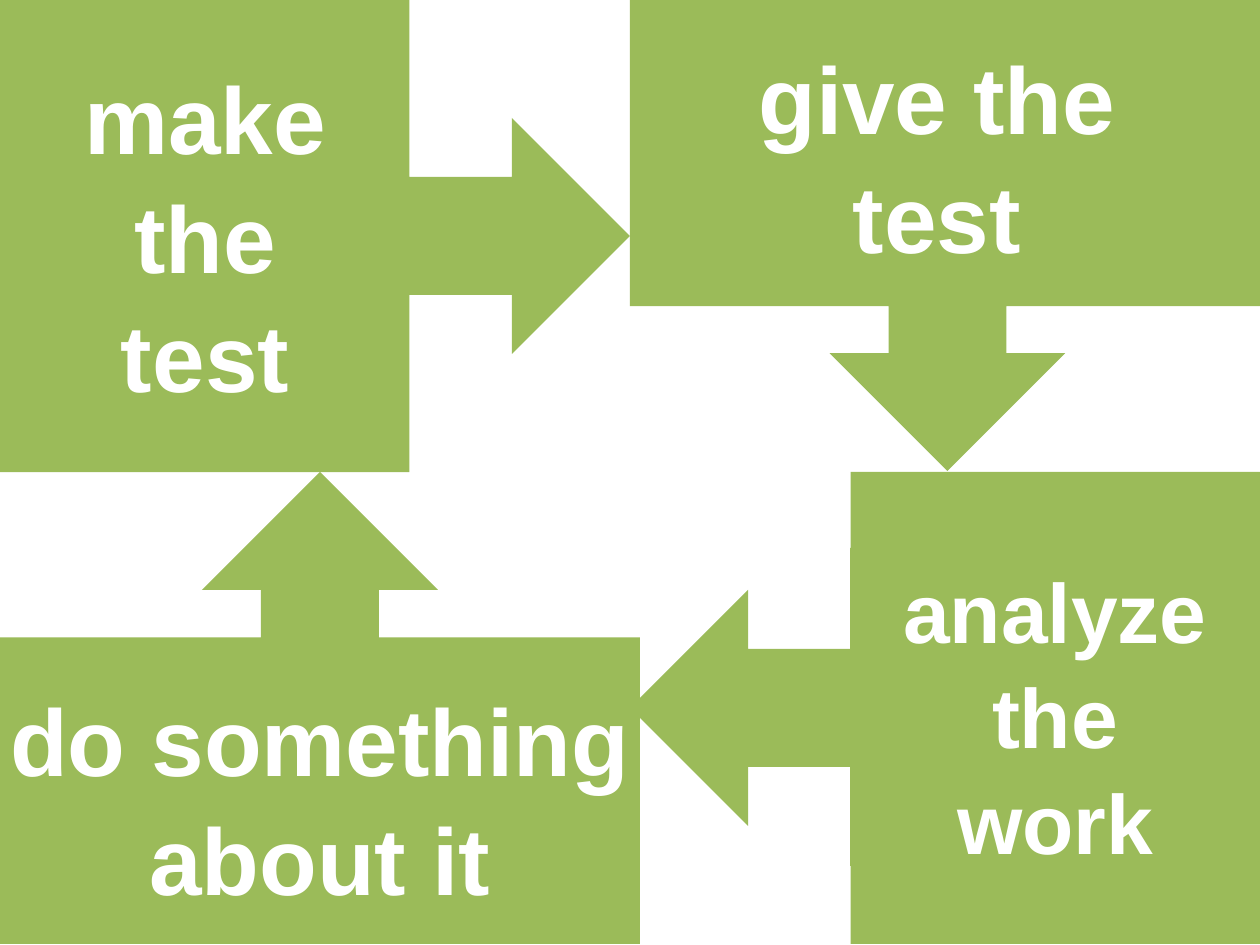
"""Build a slide with a four-step testing cycle of arrow callouts."""
import pptx
import pptx.dml.color
import pptx.enum.shapes
import pptx.enum.text
import pptx.util

PX = 914400 // 126
GREEN = pptx.dml.color.RGBColor(0x9B, 0xBB, 0x59)
WHITE = pptx.dml.color.RGBColor(0xFF, 0xFF, 0xFF)
SHAPES = pptx.enum.shapes.MSO_SHAPE

STEPS = [
    {"callout": (0, 0, 630, 472), "label": (32, 48, 346, 357),
     "text": "make\vthe\vtest", "size": 54},
    {"callout": (712, -82, 471, 635), "label": (672, 28, 530, 242),
     "text": "give the\vtest", "size": 54},
    {"callout": (630, 472, 630, 472), "label": (850, 548, 410, 318),
     "text": "analyze\nthe\vwork", "size": 48},
    {"callout": (84, 388, 472, 640), "label": (-16, 670, 672, 242),
     "text": "do something about it", "size": 54},
]


def add_block(shapes, kind, box):
    sp = shapes.add_shape(kind, *(v * PX for v in box))
    sp.shadow.inherit = False
    sp.fill.solid()
    sp.fill.fore_color.rgb = GREEN
    sp.line.fill.background()
    return sp


def write_label(sp, text, size):
    tf = sp.text_frame
    tf.text = text
    frame = {"word_wrap": True,
             "vertical_anchor": pptx.enum.text.MSO_ANCHOR.TOP,
             "auto_size": pptx.enum.text.MSO_AUTO_SIZE.SHAPE_TO_FIT_TEXT}
    for name, value in frame.items():
        setattr(tf, name, value)
    font = {"name": "Arial", "size": pptx.util.Pt(size), "bold": True}
    for p in tf.paragraphs:
        p.alignment = pptx.enum.text.PP_ALIGN.CENTER
        p.line_spacing = 1.05
        for r in p.runs:
            for name, value in font.items():
                setattr(r.font, name, value)
            r.font.color.rgb = WHITE


def main():
    prs = pptx.Presentation()
    prs.slide_width = pptx.util.Inches(10)
    prs.slide_height = pptx.util.Inches(7.5)
    s = prs.slides.add_slide(prs.slide_layouts[6])
    for i, step in enumerate(STEPS):
        group = s.shapes.add_group_shape()
        callout = add_block(group.shapes, SHAPES.RIGHT_ARROW_CALLOUT, step["callout"])
        callout.rotation = 90 * i
        if i < len(STEPS) - 1:
            label = add_block(group.shapes, SHAPES.RECTANGLE, step["label"])
        else:
            label = group.shapes.add_textbox(*(v * PX for v in step["label"]))
        write_label(label, step["text"], step["size"])
    prs.save("out.pptx")


if __name__ == "__main__":
    main()
